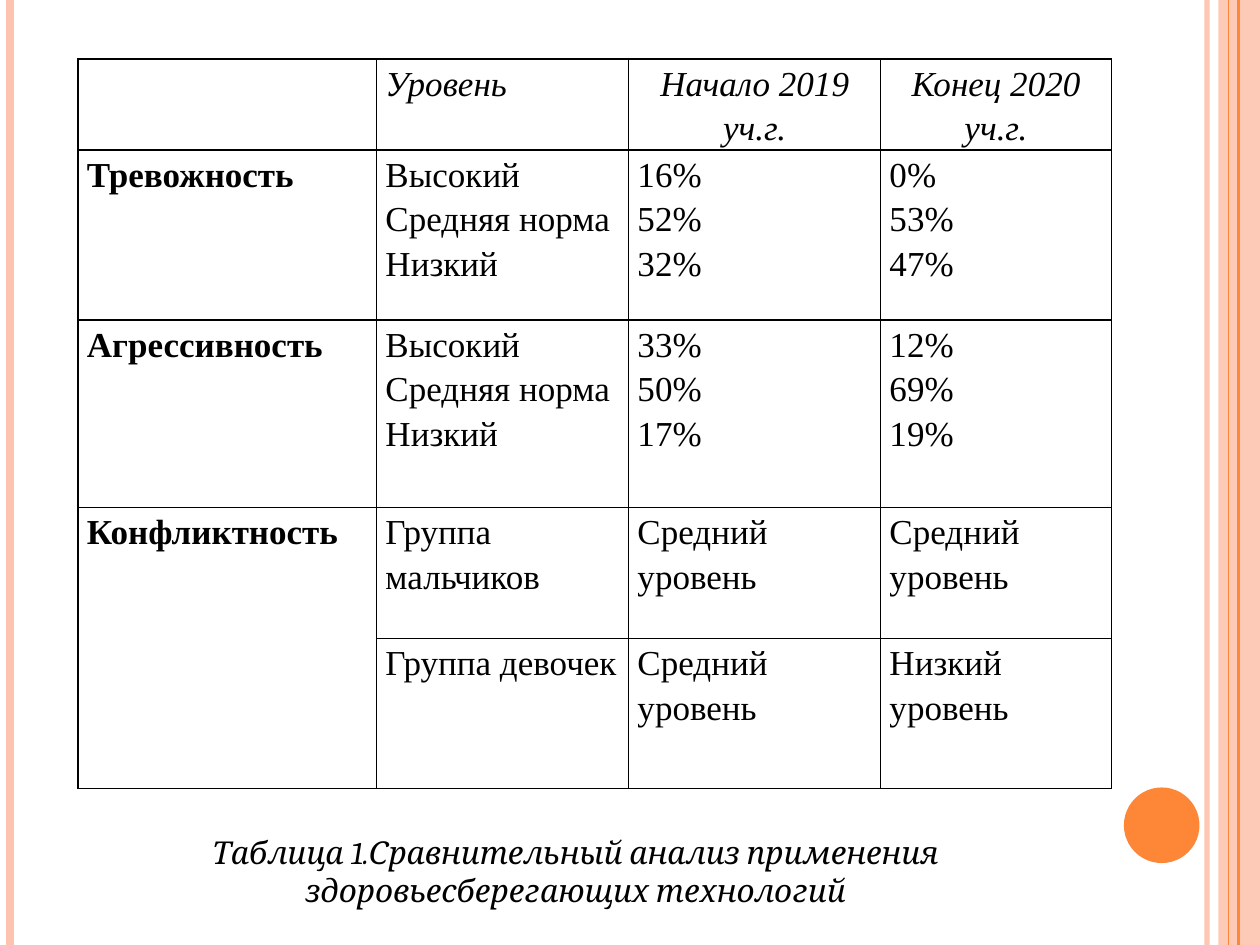
"""Build a slide with a table comparing pupils' levels in 2019 and 2020."""
from dataclasses import dataclass

from lxml.etree import SubElement
from pptx import Presentation
from pptx.dml.color import RGBColor
from pptx.enum.shapes import MSO_CONNECTOR, MSO_SHAPE
from pptx.enum.text import PP_ALIGN
from pptx.oxml import parse_xml
from pptx.oxml.ns import nsdecls, qn
from pptx.util import Inches, Pt


@dataclass(frozen=True)
class Theme:
    ink: str = "000000"
    peach: str = "FEC3AE"
    orange: str = "FE8637"
    body: str = "Times New Roman"
    serif: str = "Cambria"
    cell: int = 20
    note: int = 18


def write(par, text, font, size, bold=False, slant=False):
    run = par.add_run()
    run.text = text
    run.font.name = font
    run.font.size = Pt(size)
    run.font.bold = bold
    run.font.italic = slant
    run.font.color.rgb = RGBColor.from_string(theme.ink)


def fade(part, share):
    color = next(part._element.spPr.iter(qn("a:srgbClr")))
    SubElement(color, qn("a:alpha")).set("val", str(share * 1000))


theme = Theme()
deck = Presentation()
deck.slide_width, deck.slide_height = Inches(10), Inches(7.5)
slide = deck.slides.add_slide(deck.slide_layouts[6])
shapes = slide.shapes

band = shapes.add_shape(MSO_SHAPE.RECTANGLE, Inches(9.67), 0, Inches(0.33), Inches(7.5))
disc = shapes.add_shape(MSO_SHAPE.OVAL, Inches(8.92), Inches(6.25), Inches(0.6), Inches(0.6))
for part, color in ((band, theme.peach), (disc, theme.orange)):
    part.shadow.inherit = False
    part.fill.solid()
    part.fill.fore_color.rgb = RGBColor.from_string(color)
    part.line.fill.background()
fade(band, 87)

stripes = [
    (9.58, theme.peach, 3, 93),
    (0.08, theme.peach, 4.5, 100),
    (9.83, theme.orange, 1.5, 100),
    (9.75, theme.orange, 0.75, 100),
]
for left, color, width, share in stripes:
    stripe = shapes.add_connector(
        MSO_CONNECTOR.STRAIGHT, Inches(left), 0, Inches(left), Inches(7.5))
    stripe.line.color.rgb = RGBColor.from_string(color)
    stripe.line.width = Pt(width)
    SubElement(stripe._element.spPr, qn("a:effectLst"))
    if share < 100:
        fade(stripe, share)

levels = "Высокий\nСредняя норма\nНизкий"
rows = [
    ("", "Уровень", "Начало 2019 уч.г.", "Конец 2020 уч.г."),
    ("Тревожность", levels, "16%\n52%\n32%", "0%\n53%\n47%"),
    ("Агрессивность", levels, "33%\n50%\n17%", "12%\n69%\n19%"),
    ("Конфликтность", "Группа мальчиков", "Средний\nуровень", "Средний уровень"),
    ("", "Группа девочек", "Средний уровень", "Низкий уровень"),
]
widths = [2.37, 2, 2, 1.83]
heights = [0.72, 1.35, 1.49, 1.04, 1.19]
table = shapes.add_table(
    len(rows), len(widths), Inches(0.62), Inches(0.47),
    Inches(sum(widths)), Inches(sum(heights))).table
table.first_row = table.horz_banding = False
for column, width in zip(table.columns, widths):
    column.width = Inches(width)
for row, height in zip(table.rows, heights):
    row.height = Inches(height)

for r, row in enumerate(rows):
    for c, text in enumerate(row):
        cell = table.cell(r, c)
        cell.margin_left = cell.margin_right = Inches(0.07)
        cell.margin_top = cell.margin_bottom = 0
        props = cell._tc.get_or_add_tcPr()
        for side in ("lnL", "lnR", "lnT", "lnB"):
            props.append(parse_xml(
                f'<a:{side} {nsdecls("a")} w="{Pt(1)}"><a:solidFill>'
                f'<a:srgbClr val="{theme.ink}"/></a:solidFill></a:{side}>'))
        cell.fill.background()
        if not text:
            continue
        frame = cell.text_frame
        for n, line in enumerate(text.split("\n")):
            par = frame.add_paragraph() if n else frame.paragraphs[0]
            par.alignment = PP_ALIGN.CENTER if r == 0 and c > 1 else PP_ALIGN.JUSTIFY
            par.line_spacing = 1.15
            write(par, line, theme.body, theme.cell, bold=c == 0, slant=r == 0)
table.cell(3, 0).merge(table.cell(4, 0))

note = shapes.add_textbox(Inches(0.39), Inches(6.56), Inches(8.36), Inches(0.71))
note.text_frame.word_wrap = True
par = note.text_frame.paragraphs[0]
par.alignment = PP_ALIGN.CENTER
write(par, "Таблица 1.Сравнительный анализ применения здоровьесберегающих технологий",
      theme.serif, theme.note, slant=True)

deck.save("out.pptx")
